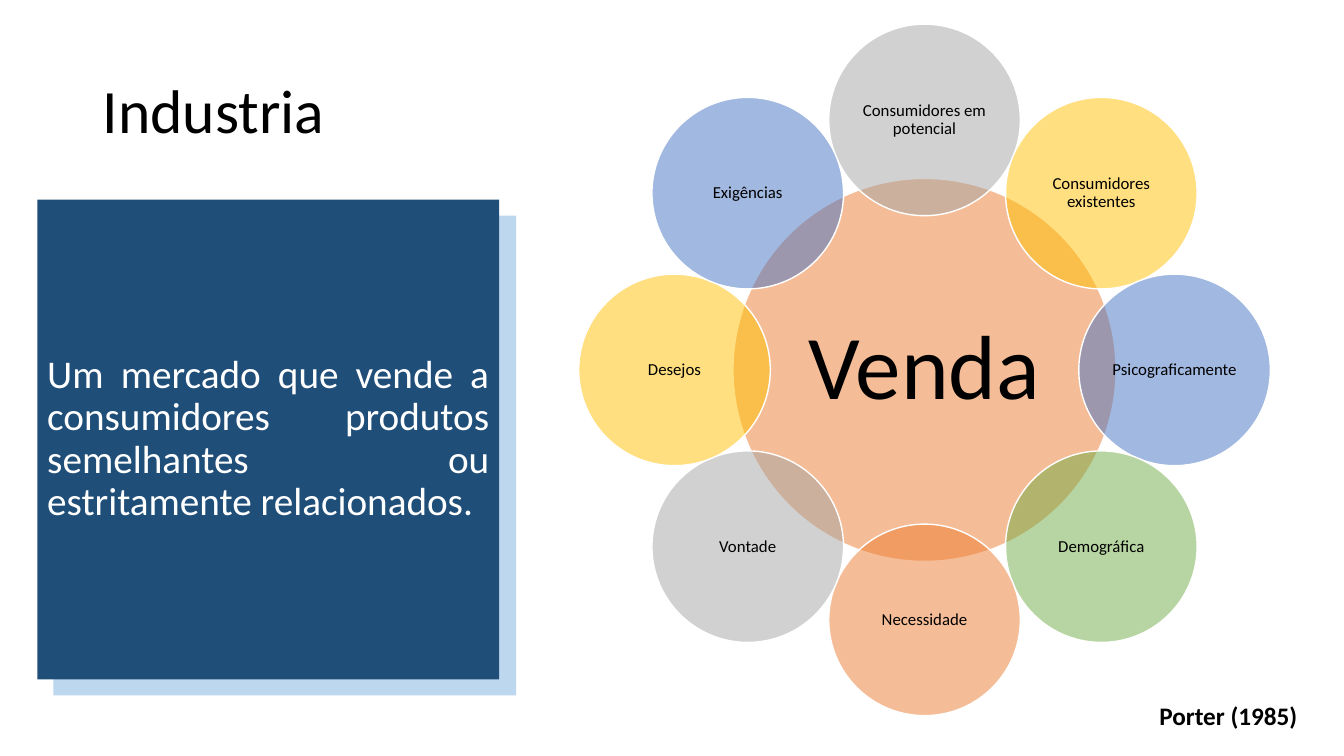
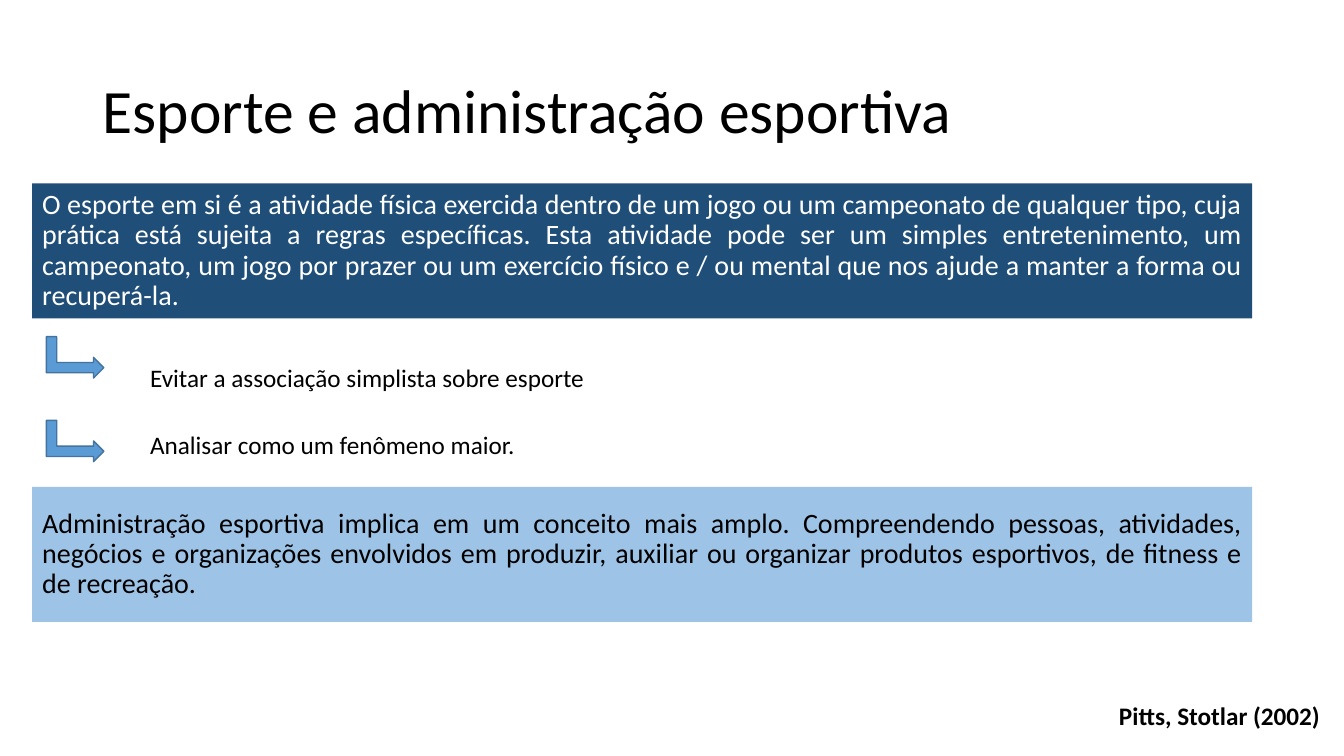
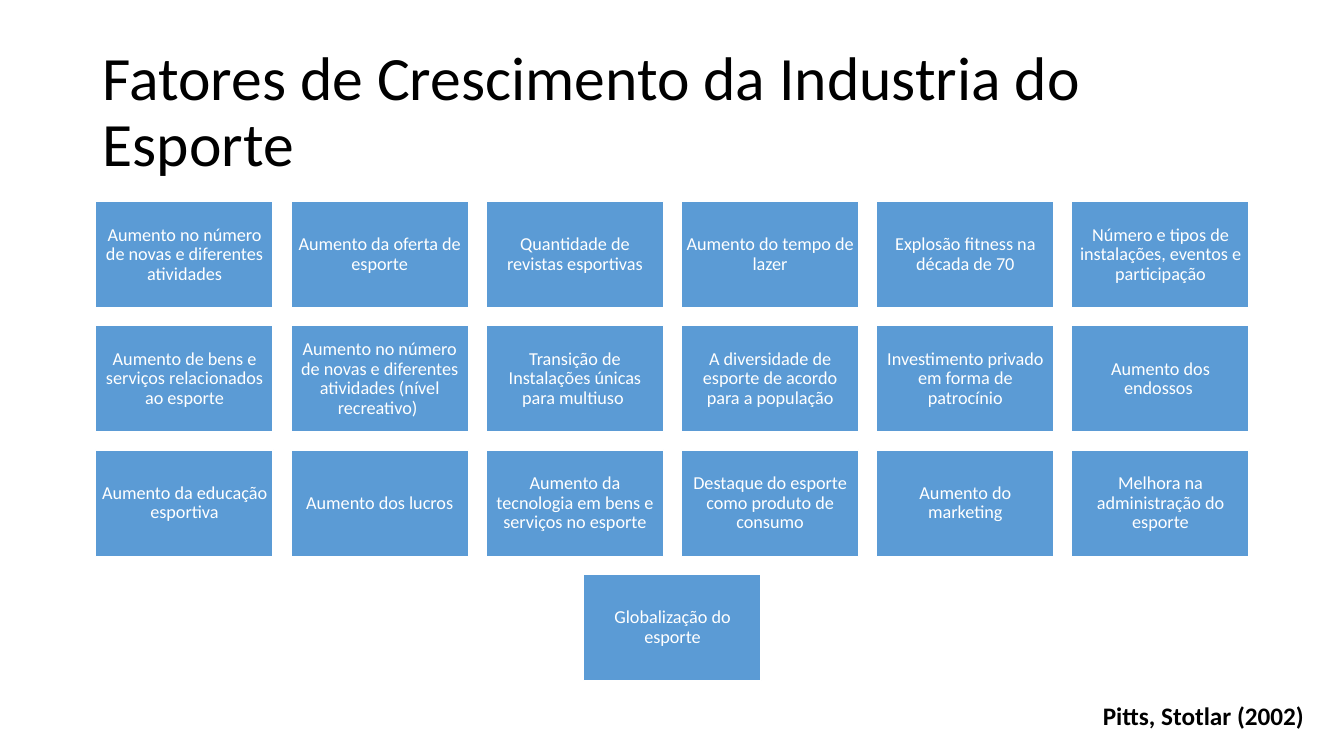
"""Build three slides on the sport industry."""
from math import cos, radians, sin

from lxml.etree import SubElement
from pptx import Presentation
from pptx.dml.color import RGBColor
from pptx.enum.shapes import MSO_SHAPE
from pptx.enum.text import MSO_ANCHOR, PP_ALIGN
from pptx.oxml.ns import qn
from pptx.util import Inches, Pt

COLORS = {
    "white": "FFFFFF",
    "black": "000000",
    "navy": "1F4E79",
    "pale": "BDD7EE",
    "sky": "9DC3E6",
    "blue": "5B9BD5",
    "edge": "43739E",
    "orange": "ED7D31",
    "gray": "A5A5A5",
    "gold": "FFC000",
    "royal": "4472C4",
    "green": "70AD47",
}


class Deck:
    """Hold the shared style and the current slide."""

    font = "Calibri"

    def __init__(self):
        self.show = Presentation()
        self.show.slide_width = Inches(13.33)
        self.show.slide_height = Inches(7.5)
        self.slide = None

    def color(self, name):
        return RGBColor.from_string(COLORS[name])

    def start(self, title, credit, left, width):
        self.slide = self.show.slides.add_slide(self.show.slide_layouts[6])
        self.text(title, (0.92, 0.4, 11.5, 1.45), 44, space=0.9, anchor=MSO_ANCHOR.MIDDLE)
        self.text(credit, (left, 6.9, width, 0.4), bold=True)

    def label(self, shape, text, size, color="black", bold=False, align=PP_ALIGN.LEFT,
              space=0.9, anchor=MSO_ANCHOR.MIDDLE, inset=None):
        frame = shape.text_frame
        frame.text = text
        frame.word_wrap = True
        frame.vertical_anchor = anchor
        if inset is not None:
            frame.margin_left = frame.margin_right = Inches(inset)
            frame.margin_top = frame.margin_bottom = Inches(inset)
        line = frame.paragraphs[0]
        line.alignment = align
        line.line_spacing = space
        font = line.runs[0].font
        font.name, font.size, font.bold = self.font, Pt(size), bold
        font.color.rgb = self.color(color)

    def text(self, text, area, size=18, bold=False, space=1.0, anchor=MSO_ANCHOR.TOP):
        box = self.slide.shapes.add_textbox(*map(Inches, area))
        self.label(box, text, size, bold=bold, space=space, anchor=anchor)

    def shape(self, kind, area, fill, line=None):
        shape = self.slide.shapes.add_shape(kind, *map(Inches, area))
        shape.shadow.inherit = False
        shape.fill.solid()
        shape.fill.fore_color.rgb = self.color(fill)
        if line:
            shape.line.color.rgb = self.color(line)
            shape.line.width = Pt(1)
        else:
            shape.line.fill.background()
        return shape

    def panel(self, text, area, fill, size, color="white"):
        box = self.shape(MSO_SHAPE.RECTANGLE, area, fill)
        self.label(box, text, size, color, align=PP_ALIGN.JUSTIFY)

    def disc(self, text, x, y, width, fill, size, inset):
        area = (x - width / 2, y - width / 2, width, width)
        disc = self.shape(MSO_SHAPE.OVAL, area, fill, "white")
        tint = disc.element.find(".//" + qn("a:srgbClr"))
        SubElement(tint, qn("a:alpha")).set("val", "50000")
        self.label(disc, text, size, align=PP_ALIGN.CENTER, inset=inset)

    def ring(self, hub, items, x, y, radius):
        self.disc(hub, x, y, 3.8, "orange", 65, 0.09)
        for place, (text, fill) in enumerate(items):
            angle = radians(360 / len(items) * place)
            self.disc(text, x + radius * sin(angle), y - radius * cos(angle),
                      1.9, fill, 12, 0.02)

    def point(self, text, top, mark):
        arrow = self.shape(MSO_SHAPE.BENT_UP_ARROW, (0.54, mark, 0.41, 0.57), "blue", "edge")
        arrow.rotation = 90
        self.text(text, (1.39, top, 6.72, 0.4))

    def grid(self, items, left, top, width, cols):
        high, gap = width * 0.6, width * 0.1
        for first in range(0, len(items), cols):
            row = items[first:first + cols]
            shift = (cols - len(row)) / 2
            y = top + first // cols * (high + gap)
            for col, text in enumerate(row):
                x = left + (col + shift) * (width + gap)
                card = self.shape(MSO_SHAPE.RECTANGLE, (x, y, width, high), "blue", "white")
                self.label(card, text, 13, "white", align=PP_ALIGN.CENTER, inset=0.05)


SALES = [
    ("Consumidores em potencial", "gray"),
    ("Consumidores existentes", "gold"),
    ("Psicograficamente", "royal"),
    ("Demográfica", "green"),
    ("Necessidade", "orange"),
    ("Vontade", "gray"),
    ("Desejos", "gold"),
    ("Exigências", "royal"),
]

FACTORS = [
    "Aumento no número de novas e diferentes atividades",
    "Aumento da oferta de esporte",
    "Quantidade de revistas esportivas",
    "Aumento do tempo de lazer",
    "Explosão fitness na década de 70",
    "Número e tipos de instalações, eventos e participação",
    "Aumento de bens e serviços relacionados ao esporte",
    "Aumento no número de novas e diferentes atividades (nível recreativo) ",
    "Transição de Instalações únicas para multiuso ",
    "A diversidade de esporte de acordo para a população",
    "Investimento privado em forma de patrocínio",
    "Aumento dos endossos ",
    "Aumento da educação esportiva",
    "Aumento dos lucros",
    "Aumento da tecnologia em bens e serviços no esporte",
    "Destaque do esporte como produto de consumo",
    "Aumento do marketing",
    "Melhora na administração do esporte",
    "Globalização do esporte",
]


def main():
    deck = Deck()

    deck.start("Industria", "Porter (1985)", 11.4, 2.03)
    deck.shape(MSO_SHAPE.RECTANGLE, (0.53, 2.14, 4.59, 4.76), "pale")
    deck.panel("Um mercado que vende a consumidores produtos semelhantes ou "
               "estritamente relacionados.", (0.37, 1.98, 4.58, 4.76), "navy", 28)
    deck.ring("Venda", SALES, 9.17, 3.67, 2.48)

    deck.start("Esporte e administração esportiva", "Pitts, Stotlar (2002)", 11, 2.43)
    deck.panel("O esporte em si é a atividade física exercida dentro de um jogo ou um "
               "campeonato de qualquer tipo, cuja prática está sujeita a regras específicas. "
               "Esta atividade pode ser um simples entretenimento, um campeonato, um jogo "
               "por prazer ou um exercício físico e / ou mental que nos ajude a manter a "
               "forma ou recuperá-la.", (0.32, 1.82, 12.1, 1.34), "navy", 20)
    deck.point("Evitar a associação simplista sobre esporte", 3.55, 3.26)
    deck.point("Analisar como um fenômeno maior.", 4.21, 4.09)
    deck.panel("Administração esportiva implica em um conceito mais amplo. Compreendendo "
               "pessoas, atividades, negócios e organizações envolvidos em produzir, auxiliar "
               "ou organizar produtos esportivos, de fitness e de recreação.",
               (0.32, 4.83, 12.1, 1.34), "sky", 20, "black")

    deck.start("Fatores de Crescimento da Industria do Esporte",
               "Pitts, Stotlar (2002)", 10.84, 2.43)
    deck.grid(FACTORS, 0.95, 2, 1.76, 6)

    deck.show.save("out.pptx")


if __name__ == "__main__":
    main()
